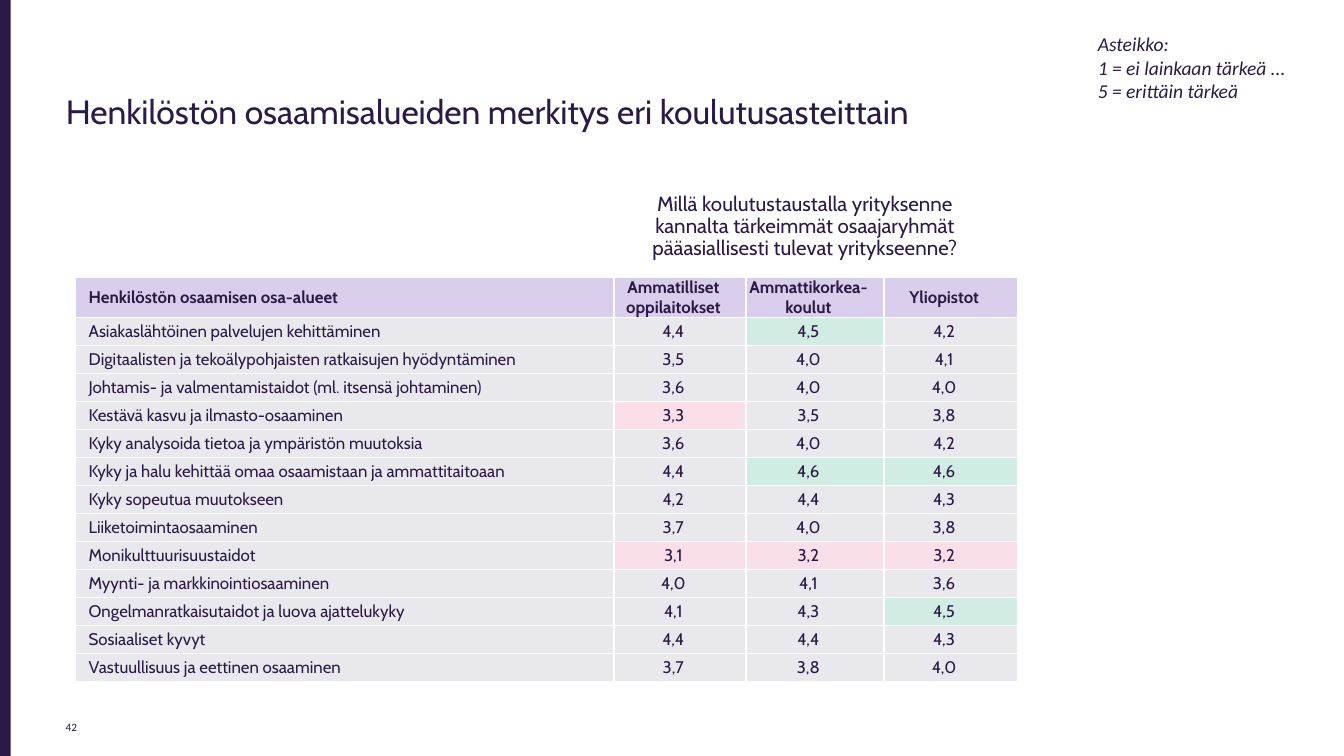
from lxml import etree
from pptx import Presentation
from pptx.dml.color import RGBColor
from pptx.enum.shapes import MSO_SHAPE as Shape
from pptx.enum.text import MSO_ANCHOR as Anchor, PP_ALIGN as Align
from pptx.oxml.ns import qn
from pptx.util import Inches, Pt

COLORS = {
    "ink": "2C1A46",
    "header": "DACEED",
    "cell": "E9E8ED",
    "high": "D1ECE2",
    "low": "FADEE8",
    "border": "FFFFFF",
}
HIGH_LIMIT, LOW_LIMIT = 4.5, 3.3

HEADINGS = ["Henkilöstön osaamisen osa-alueet", "Ammatilliset oppilaitokset",
            "Ammattikorkea-koulut", "Yliopistot"]
SKILLS = [
    ("Asiakaslähtöinen palvelujen kehittäminen", 4.4, 4.5, 4.2),
    ("Digitaalisten ja tekoälypohjaisten ratkaisujen hyödyntäminen", 3.5, 4.0, 4.1),
    ("Johtamis- ja valmentamistaidot (ml. itsensä johtaminen)", 3.6, 4.0, 4.0),
    ("Kestävä kasvu ja ilmasto-osaaminen", 3.3, 3.5, 3.8),
    ("Kyky analysoida tietoa ja ympäristön muutoksia", 3.6, 4.0, 4.2),
    ("Kyky ja halu kehittää omaa osaamistaan ja ammattitaitoaan", 4.4, 4.6, 4.6),
    ("Kyky sopeutua muutokseen", 4.2, 4.4, 4.3),
    ("Liiketoimintaosaaminen", 3.7, 4.0, 3.8),
    ("Monikulttuurisuustaidot", 3.1, 3.2, 3.2),
    ("Myynti- ja markkinointiosaaminen", 4.0, 4.1, 3.6),
    ("Ongelmanratkaisutaidot ja luova ajattelukyky", 4.1, 4.3, 4.5),
    ("Sosiaaliset kyvyt", 4.4, 4.4, 4.3),
    ("Vastuullisuus ja eettinen osaaminen", 3.7, 3.8, 4.0),
]


def score_color(score):
    if score >= HIGH_LIMIT:
        return "high"
    return "low" if score <= LOW_LIMIT else "cell"


class SlideBuilder:
    def __init__(self, slide):
        self.slide = slide

    def place(self, shape, box):
        shape.left, shape.top, shape.width, shape.height = map(Inches, box)

    def fill(self, target, color):
        target.fill.solid()
        target.fill.fore_color.rgb = RGBColor.from_string(COLORS[color])

    def format(self, frame, size, font="Cabin", bold=False, italic=False,
               align=Align.LEFT, spacing=None):
        for paragraph in frame.paragraphs:
            paragraph.alignment = align
            paragraph.line_spacing = spacing
            for run in paragraph.runs:
                run.font.name, run.font.size = font, Pt(size)
                run.font.bold, run.font.italic = bold, italic
                run.font.color.rgb = RGBColor.from_string(COLORS["ink"])

    def bar(self, box):
        bar = self.slide.shapes.add_shape(Shape.RECTANGLE, *map(Inches, box))
        bar.shadow.inherit = False
        self.fill(bar, "ink")
        bar.line.fill.background()

    def title(self, text, box):
        title = self.slide.shapes.title
        self.place(title, box)
        title.text_frame.text = text
        title.text_frame.vertical_anchor = Anchor.MIDDLE
        self.format(title.text_frame, 18, spacing=0.9)

    def text(self, text, box, size, anchor=Anchor.TOP, margin=0.1, **style):
        frame = self.slide.shapes.add_textbox(*map(Inches, box)).text_frame
        frame.word_wrap = True
        frame.vertical_anchor = anchor
        frame.margin_left = frame.margin_right = Inches(margin)
        frame.text = text
        self.format(frame, size, **style)

    def borders(self, cell):
        properties = cell._tc.get_or_add_tcPr()
        for side in ("a:lnL", "a:lnR", "a:lnT", "a:lnB"):
            line = etree.SubElement(properties, qn(side), w=str(Pt(1)))
            solid = etree.SubElement(line, qn("a:solidFill"))
            etree.SubElement(solid, qn("a:srgbClr"), val=COLORS["border"])

    def cell(self, cell, text, color, is_label, bold):
        cell.text_frame.text = text
        cell.vertical_anchor = Anchor.MIDDLE
        cell.margin_top = cell.margin_bottom = 0
        cell.margin_left = Inches(0.1 if is_label else 0)
        cell.margin_right = Inches(0 if is_label else 0.1)
        self.borders(cell)
        self.fill(cell, color)
        self.format(cell.text_frame, 9, bold=bold,
                    align=Align.LEFT if is_label else Align.CENTER)

    def table(self, headings, rows, box, widths):
        table = self.slide.shapes.add_table(
            len(rows) + 1, len(headings), *map(Inches, box)).table
        for column, width in zip(table.columns, widths):
            column.width = Inches(width)
        for col, heading in enumerate(headings):
            self.cell(table.cell(0, col), heading, "header", col == 0, True)
        for row, (skill, *scores) in enumerate(rows, 1):
            self.cell(table.cell(row, 0), skill, "cell", True, False)
            for col, score in enumerate(scores, 1):
                self.cell(table.cell(row, col), f"{score:.1f}".replace(".", ","),
                          score_color(score), False, False)


def main():
    deck = Presentation()
    deck.slide_width = Inches(10)
    deck.slide_height = deck.slide_width * 9 // 16
    builder = SlideBuilder(deck.slides.add_slide(deck.slide_layouts[5]))

    # Left edge and title
    builder.bar((0, 0, 0.08, 5.63))
    builder.title("Henkilöstön osaamisalueiden merkitys eri koulutusasteittain",
                  (0.39, 0.3, 7.57, 1.09))

    # Scores by level of education; the header row grows to two lines
    builder.table(HEADINGS, SKILLS, (0.56, 2.06, 7.01, 2.92),
                  (4.01, 0.98, 1.03, 0.99))

    # Page number, scale and question
    builder.text("42", (0.39, 5.21, 0.41, 0.3), 6, Anchor.BOTTOM, font="Calibri")
    builder.text("Asteikko:\n1 = ei lainkaan tärkeä ...\n5 = erittäin tärkeä",
                 (8.07, 0.19, 1.75, 0.63), 10.5, font="Calibri", italic=True)
    builder.text("Millä koulutustaustalla yrityksenne kannalta tärkeimmät "
                 "osaajaryhmät pääasiallisesti tulevat yritykseenne?",
                 (4.5, 1.39, 2.98, 1.53), 11, margin=0.25,
                 align=Align.CENTER, spacing=0.9)

    deck.save("out.pptx")


if __name__ == "__main__":
    main()
